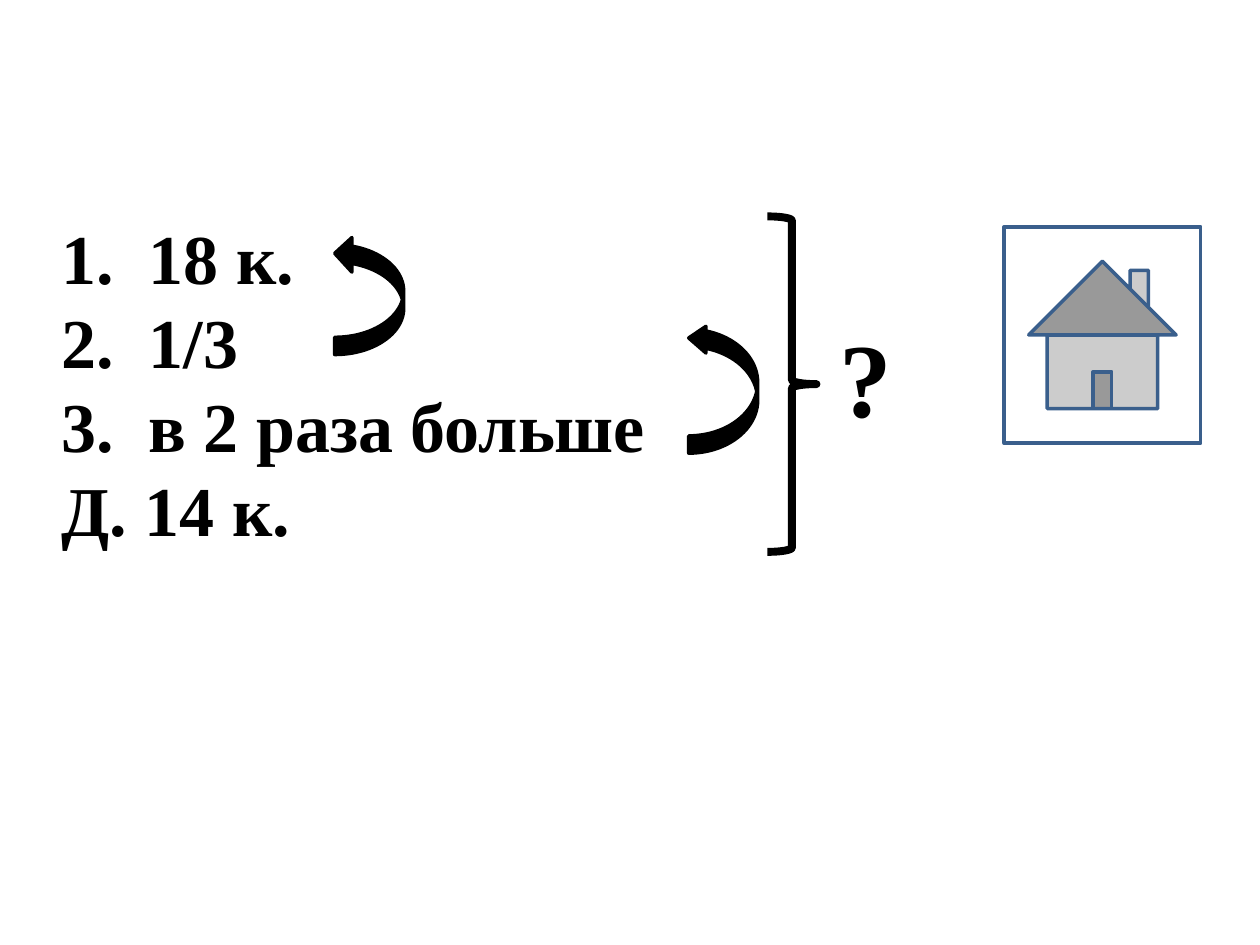
from pptx import Presentation
from pptx.dml.color import RGBColor
from pptx.enum.shapes import MSO_SHAPE
from pptx.enum.text import MSO_ANCHOR, MSO_AUTO_SIZE
from pptx.util import Inches, Pt

CURVED_UP = MSO_SHAPE.CURVED_UP_ARROW
BRACE = MSO_SHAPE.RIGHT_BRACE
HOME = MSO_SHAPE.ACTION_BUTTON_HOME
TOP = MSO_ANCHOR.TOP
NO_FIT = MSO_AUTO_SIZE.NONE

COLORS = {"ink": "000000", "paper": "FFFFFF", "edge": "3A5F8C"}
FONT = "Times New Roman"
INDENT = 0.69

prs = Presentation()
prs.slide_width, prs.slide_height = Inches(10), Inches(7.5)
W, H = prs.slide_width, prs.slide_height
s = prs.slides.add_slide(prs.slide_layouts[1])


def box(x, y, w, h):
    return int(W * x), int(H * y), int(W * w), int(H * h)


def add_text(p, text, size=40, color="ink", bold=True, number=False):
    pPr = p._p.get_or_add_pPr()
    indent = Inches(INDENT) if number else 0
    pPr.set("marL", str(indent))
    pPr.set("indent", str(-indent))
    if number:
        bullet = pPr.makeelement(
            "{http://schemas.openxmlformats.org/drawingml/2006/main}buAutoNum",
            {"type": "arabicPeriod"})
    else:
        bullet = pPr.makeelement(
            "{http://schemas.openxmlformats.org/drawingml/2006/main}buNone", {})
    pPr.append(bullet)
    p.space_before = p.space_after = Pt(0)
    p.line_spacing = Pt(size * 1.2)
    r = p.add_run()
    r.text = text
    r.font.name = FONT
    r.font.size = Pt(size)
    r.font.bold = bold
    r.font.color.rgb = RGBColor.from_string(COLORS[color])


title, body = s.placeholders
body.left, body.top, body.width, body.height = box(0.039, 0.22, 0.617, 0.372)
tf = body.text_frame
tf.word_wrap, tf.auto_size, tf.vertical_anchor = True, NO_FIT, TOP
lines = ["18 к.", "1/3", "в 2 раза больше", "Д. 14 к."]
for i, line in enumerate(lines):
    p = tf.paragraphs[0] if i == 0 else tf.add_paragraph()
    add_text(p, line, number=i < 3)

title.left, title.top, title.width, title.height = box(0.656, 0.324, 0.102, 0.148)
tf = title.text_frame
tf.word_wrap, tf.auto_size, tf.vertical_anchor = True, NO_FIT, TOP
add_text(tf.paragraphs[0], "?", size=60)
tf.paragraphs[0].alignment = 1

shapes = [
    (CURVED_UP, (0.246, 0.276, 0.094, 0.073), 270, [], "ink", "ink", 2),
    (CURVED_UP, (0.523, 0.375, 0.102, 0.073), 270, [0.25, 0.387, 0.25], "ink", "ink", 2),
    (BRACE, (0.609, 0.229, 0.039, 0.355), 0, [], None, "ink", 4.5),
    (HOME, (0.797, 0.24, 0.156, 0.229), 0, [], "paper", "edge", 2),
]
for kind, place, turn, adjustments, fill, line, width in shapes:
    sp = s.shapes.add_shape(kind, *box(*place))
    sp.shadow.inherit = False
    sp.rotation = turn
    for i, value in enumerate(adjustments):
        sp.adjustments[i] = value
    if fill:
        sp.fill.solid()
        sp.fill.fore_color.rgb = RGBColor.from_string(COLORS[fill])
    else:
        sp.fill.background()
    sp.line.color.rgb = RGBColor.from_string(COLORS[line])
    sp.line.width = Pt(width)

prs.save("out.pptx")
